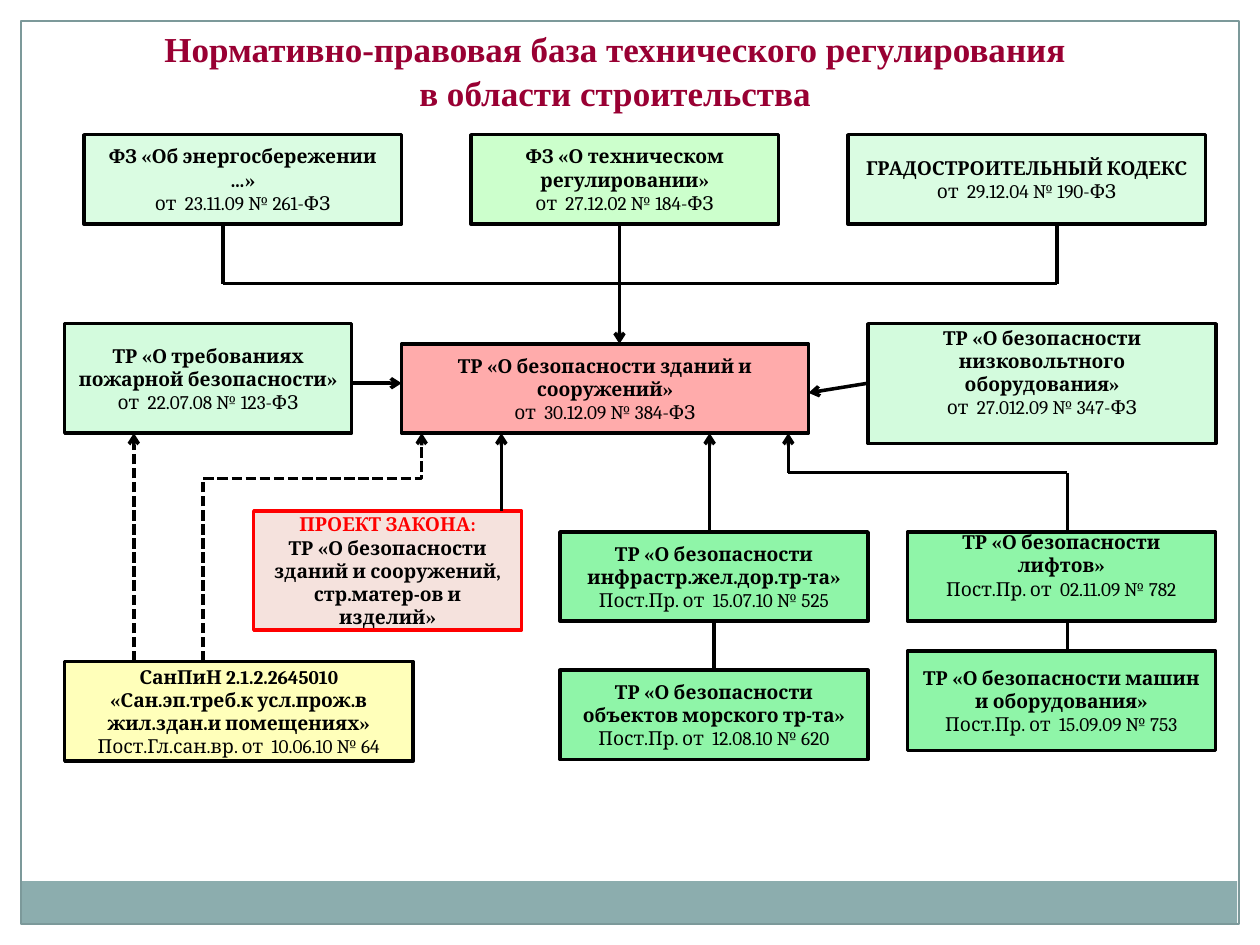
import pptx
import pptx.dml.color
import pptx.enum.dml
import pptx.enum.shapes
import pptx.enum.text
import pptx.oxml.ns
import pptx.util
from lxml import etree

Pt = pptx.util.Pt
COLORS = {
    "black": "000000", "red": "FF0000", "title": "990033", "green": "7CF499",
    "mint": "DAFCE2", "lime": "CCFFCC", "rose": "E2A99A", "yellow": "FFFF00",
    "band": "8CADAE", "frame": "7C999A",
}


def rgb(name):
    return pptx.dml.color.RGBColor.from_string(COLORS[name])


def add_xml(parent, tag, **attrs):
    return etree.SubElement(parent, pptx.oxml.ns.qn(tag), attrs)


class Diagram:
    font, size, line_width = "Cambria", 11, 2

    def __init__(self, s):
        self.s = s

    def rect(self, left, top, width, height, fill=None, alpha=100, line=None, weight=None):
        kind = pptx.enum.shapes.MSO_SHAPE.RECTANGLE
        sp = self.s.shapes.add_shape(kind, Pt(left), Pt(top), Pt(width), Pt(height))
        sp.shadow.inherit = False
        if fill:
            sp.fill.solid()
            sp.fill.fore_color.rgb = rgb(fill)
            if alpha < 100:
                color = sp._element.spPr.find(".//" + pptx.oxml.ns.qn("a:srgbClr"))
                add_xml(color, "a:alpha", val=str(alpha * 1000))
        else:
            sp.fill.background()
        if line:
            sp.line.color.rgb = rgb(line)
            sp.line.width = Pt(weight or self.line_width)
        else:
            sp.line.fill.background()
        return sp

    def set_lines(self, tf, lines, font, size):
        """Fill a frame with centred (text, bold, colour) paragraphs."""
        tf.word_wrap = True
        tf.text = "\n".join(text for text, _, _ in lines)
        for p, (_, bold, color) in zip(tf.paragraphs, lines):
            p.alignment = pptx.enum.text.PP_ALIGN.CENTER
            for r in p.runs:
                r.font.name, r.font.size, r.font.bold = font, Pt(size), bold
                r.font.color.rgb = rgb(color)

    def title(self, lines, left, top, width, height):
        sp = self.s.shapes.title
        sp.left, sp.top, sp.width, sp.height = Pt(left), Pt(top), Pt(width), Pt(height)
        tf = sp.text_frame
        tf.auto_size = pptx.enum.text.MSO_AUTO_SIZE.NONE
        tf.vertical_anchor = pptx.enum.text.MSO_ANCHOR.TOP
        tf.margin_top = Pt(5)
        self.set_lines(tf, [(text, True, "title") for text in lines], "Times New Roman", 20)
        for p in tf.paragraphs:
            p.line_spacing = 1.05

    def act(self, at, name, details, fill, alpha=100, lift=0):
        """A legal act: bold name over its date and number."""
        sp = self.rect(*at, fill, alpha, "black")
        self.box_text(sp, [(name, True, "black"), (details, False, "black")], lift)

    def draft(self, at, heading, name):
        sp = self.rect(*at, "rose", 33, "red")
        self.box_text(sp, [(heading, True, "red"), (name, True, "black")])

    def box_text(self, sp, lines, lift=0):
        tf = sp.text_frame
        tf.vertical_anchor = pptx.enum.text.MSO_ANCHOR.MIDDLE
        tf.margin_top, tf.margin_bottom = 0, Pt(lift)
        self.set_lines(tf, lines, self.font, self.size)

    def line(self, x1, y1, x2, y2, arrow=False, dashed=False, elbow=False):
        kinds = pptx.enum.shapes.MSO_CONNECTOR
        kind = kinds.ELBOW if elbow else kinds.STRAIGHT
        c = self.s.shapes.add_connector(kind, Pt(x1), Pt(y1), Pt(x2), Pt(y2))
        c.line.color.rgb = rgb("black")
        c.line.width = Pt(self.line_width)
        if dashed:
            c.line.dash_style = pptx.enum.dml.MSO_LINE.SQUARE_DOT
        spPr = c._element.spPr
        if arrow:
            add_xml(spPr.find(pptx.oxml.ns.qn("a:ln")), "a:tailEnd", type="arrow")
        add_xml(spPr, "a:effectLst")
        return c

    def upward_elbow(self, x1, y1, x2, y2, bend):
        """Dashed arrow that leaves upwards, turns right and ends upwards."""
        run, rise = x2 - x1, y1 - y2
        cx, cy = (x1 + x2) / 2, (y1 + y2) / 2
        c = self.line(cx + rise / 2, cy + run / 2, cx - rise / 2, cy - run / 2,
                      arrow=True, dashed=True, elbow=True)
        spPr = c._element.spPr
        spPr.find(pptx.oxml.ns.qn("a:xfrm")).set("rot", "5400000")
        guides = spPr.find(".//" + pptx.oxml.ns.qn("a:avLst"))
        add_xml(guides, "a:gd", name="adj1", fmla=f"val {round(bend * 100000)}")


def main():
    prs = pptx.Presentation()
    prs.slide_width, prs.slide_height = Pt(720), Pt(540)
    d = Diagram(prs.slides.add_slide(prs.slide_layouts[5]))

    d.rect(11.5, 503.5, 695.5, 24.5, "band")
    d.rect(12, 12, 696, 516, line="frame", weight=0.75)
    d.title(["Нормативно-правовая база технического регулирования",
             "в области строительства"], 28, 9.5, 647, 67.5)

    # Federal laws
    law_top, law_h = 77, 51
    d.act((269, law_top, 176, law_h), "ФЗ «О техническом регулировании»",
          "от  27.12.02 № 184-ФЗ", "lime")
    d.act((484.5, law_top, 204.5, law_h), "ГРАДОСТРОИТЕЛЬНЫЙ КОДЕКС",
          "от  29.12.04 № 190-ФЗ", "mint")
    d.act((48, law_top, 181.5, law_h), "ФЗ «Об энергосбережении …»",
          "от  23.11.09 № 261-ФЗ", "mint")

    # Technical regulations adopted as laws
    d.act((229.5, 196.5, 232.5, 51), "ТР «О безопасности зданий и сооружений»",
          "от  30.12.09 № 384-ФЗ", "red", 33)
    d.act((37, 185, 164, 62.5), "ТР «О требованиях пожарной безопасности»",
          "от  22.07.08 № 123-ФЗ", "green", 33)
    d.act((496, 185, 199, 68.5), "ТР «О безопасности низковольтного оборудования»",
          "от  27.012.09 № 347-ФЗ", "green", 33, lift=13)

    # Government decrees
    rail_x, lift_x, decree_w = 320, 518.5, 176
    d.act((rail_x, 304, decree_w, 51), "ТР «О безопасности инфрастр.жел.дор.тр-та»",
          "Пост.Пр. от  15.07.10 № 525", "green", 85)
    d.act((rail_x, 383, decree_w, 51), "ТР «О безопасности объектов морского тр-та»",
          "Пост.Пр. от  12.08.10 № 620", "green", 85)
    d.act((lift_x, 304, decree_w, 51), "ТР «О безопасности лифтов»",
          "Пост.Пр. от  02.11.09 № 782", "green", 85, lift=13)
    d.act((lift_x, 372, decree_w, 57), "ТР «О безопасности машин и оборудования»",
          "Пост.Пр. от  15.09.09 № 753", "green", 85)

    d.draft((145, 292, 153, 68), "ПРОЕКТ ЗАКОНА:",
            "ТР «О безопасности зданий и сооружений, стр.матер-ов и изделий»")
    d.act((37, 378, 199, 57),
          "СанПиН 2.1.2.2645010 «Сан.эп.треб.к усл.прож.в жил.здан.и помещениях»",
          "Пост.Гл.сан.вр. от  10.06.10 № 64", "yellow", 27)

    # Laws join a common bar above the central regulation
    law_bottom, bar_y, center_bottom = law_top + law_h, 162, 247.5
    d.line(127.5, bar_y, 604, bar_y)
    for x in (127.5, 604):
        d.line(x, bar_y, x, law_bottom)
    d.line(354, law_bottom, 354, 196.5, arrow=True)
    d.line(201, 219, 229.5, 219, arrow=True)
    d.line(496, 219, 462, 224.5, arrow=True)

    # Lower documents feed the regulations from below
    for x, y in ((405.5, 304), (286.5, 292), (450.5, 270)):
        d.line(x, y, x, center_bottom, arrow=True)
    for x, y1, y2 in ((408, 383, 355), (610, 372, 355), (610, 304, 270)):
        d.line(x, y1, x, y2)
    d.line(450.5, 270, 610, 270)
    d.line(76.5, 378, 76.5, center_bottom, arrow=True, dashed=True)
    d.upward_elbow(116, 378, 241, center_bottom, 0.8)

    prs.save("out.pptx")


if __name__ == "__main__":
    main()
